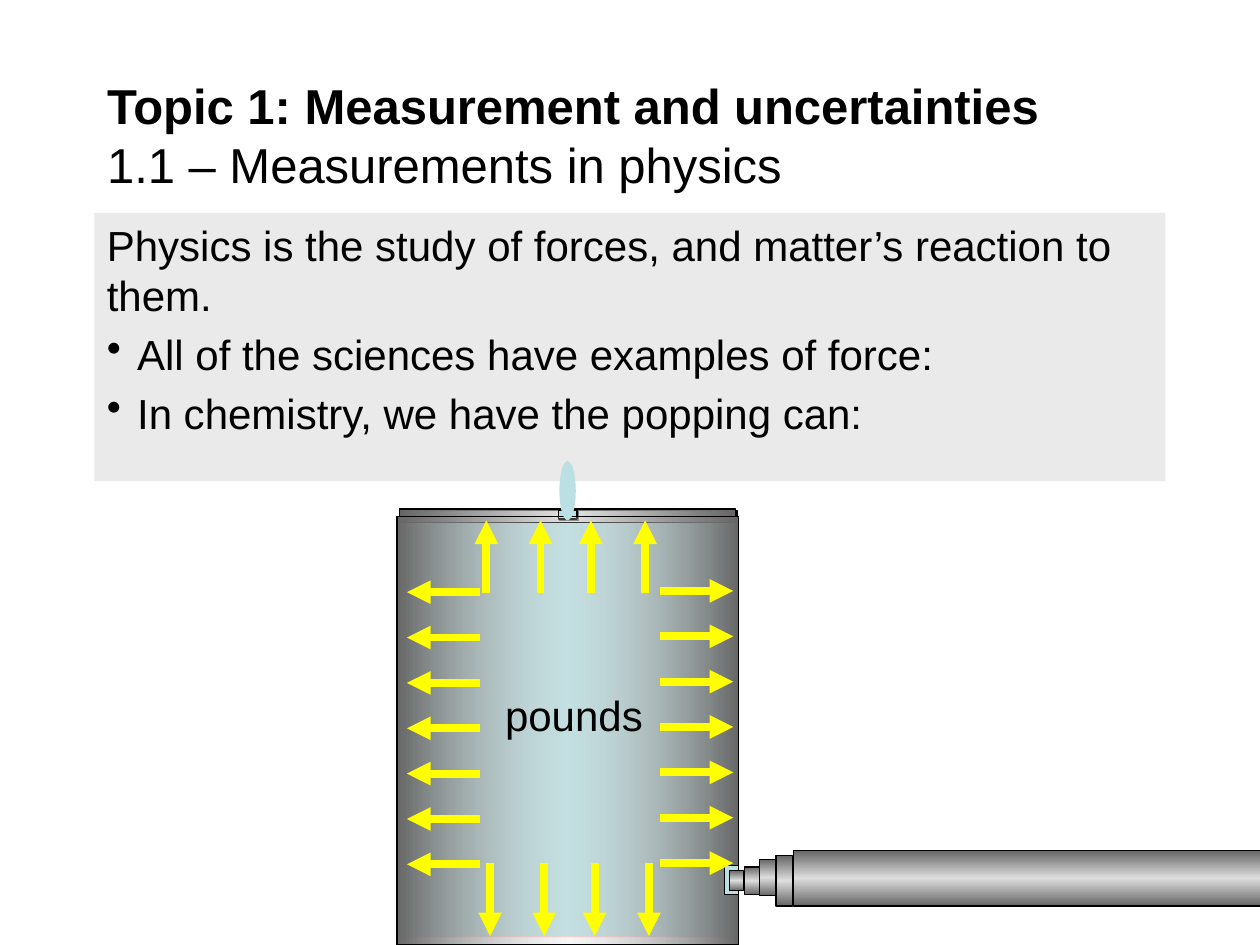
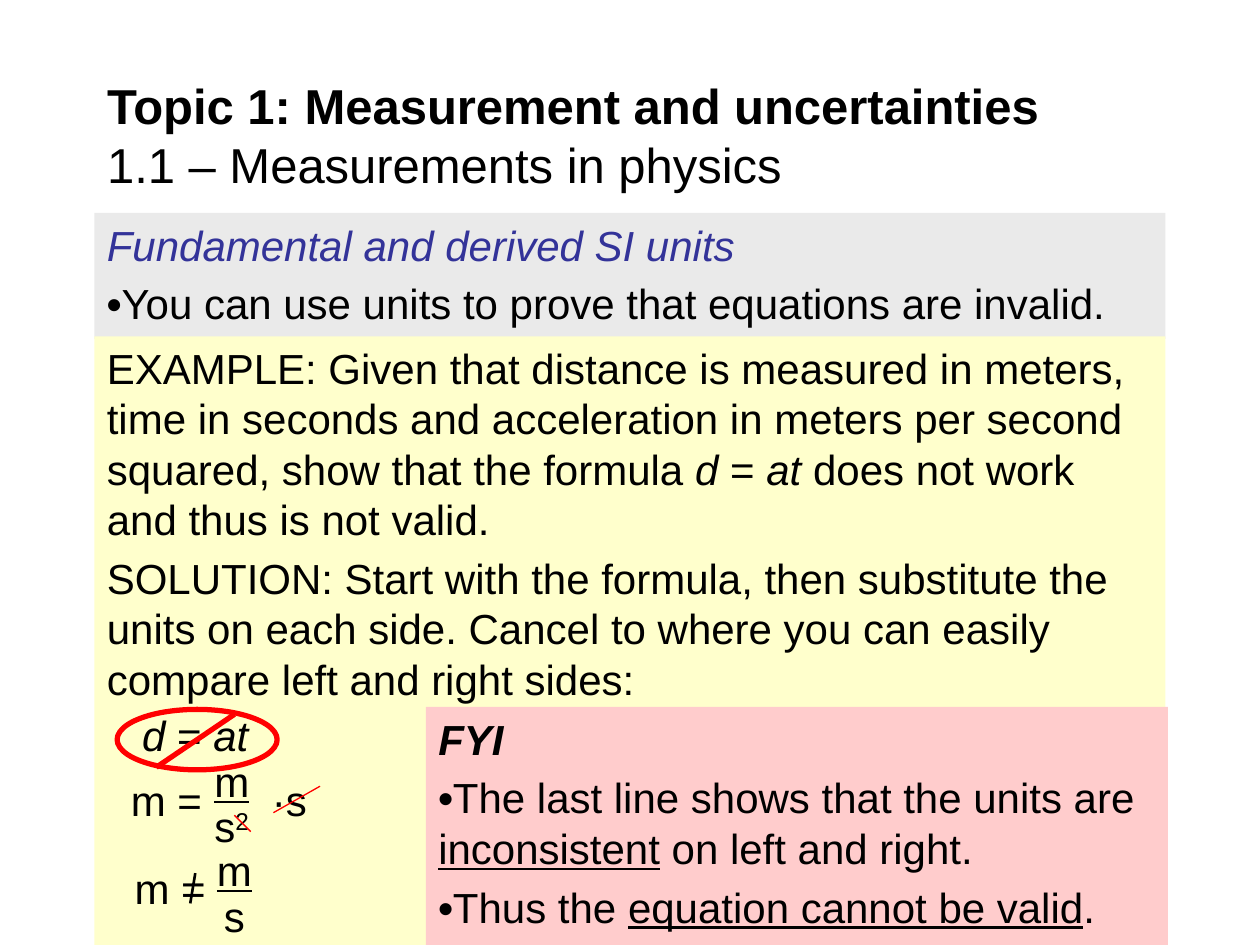
"""Build two physics slides: forces in a popping can, and a unit check of an equation."""
from dataclasses import dataclass

from lxml.etree import SubElement
from pptx import Presentation
from pptx.dml.color import RGBColor
from pptx.enum.shapes import MSO_CONNECTOR, MSO_SHAPE
from pptx.enum.text import MSO_ANCHOR, MSO_AUTO_SIZE, PP_ALIGN
from pptx.oxml.ns import qn
from pptx.util import Inches, Pt


@dataclass(frozen=True)
class Theme:
    font: str = "Arial"
    title_size: int = 28
    body_size: int = 24
    black: str = "000000"
    heading: str = "333399"
    gray: str = "EAEAEA"
    yellow: str = "FFFFCC"
    pink: str = "FFCCCC"
    water: str = "BBE0E3"
    arrow: str = "FFFF00"
    red: str = "FF0000"
    metal_dark: str = "666666"
    metal_light: str = "DDDDDD"


theme = Theme()
BOLD, PLAIN, ITALIC, UNDERLINE = {"bold": True}, {"bold": False}, {"italic": True}, {"underline": True}
SPACED = {"space_before": Pt(4.8)}
TIGHT = {"line_spacing": 0.9}
FRACTION = {**TIGHT, "alignment": PP_ALIGN.CENTER}


def add_block(page, kind, at, fill=None, line=None, width=0.75, angle=0, opacity=100):
    """Add a shape; the fill "metal" is a gradient along the angle with a see-through middle."""
    shape = page.shapes.add_shape(kind, *map(Inches, at))
    shape.shadow.inherit = False
    if fill == "metal":
        shape.fill.gradient()
        shape.fill.gradient_angle = angle
        stops = shape._element.spPr.find(".//" + qn("a:gsLst"))
        for stop in list(stops):
            stops.remove(stop)
        for position, color, alpha in [
            (0, theme.metal_dark, 100),
            (50, theme.metal_light, opacity),
            (100, theme.metal_dark, 100),
        ]:
            stop = SubElement(stops, qn("a:gs"), pos=str(position * 1000))
            tone = SubElement(stop, qn("a:srgbClr"), val=color)
            SubElement(tone, qn("a:alpha"), val=str(alpha * 1000))
    elif fill:
        shape.fill.solid()
        shape.fill.fore_color.rgb = RGBColor.from_string(fill)
    else:
        shape.fill.background()
    if line:
        shape.line.color.rgb = RGBColor.from_string(line)
        shape.line.width = Pt(width)
    else:
        shape.line.fill.background()
    return shape


def write(box, paragraphs, layout, size=theme.body_size, anchor=MSO_ANCHOR.TOP):
    """Fill a box with paragraphs, each a list of (text, font values) spans."""
    frame = box.text_frame
    frame.word_wrap = True
    frame.auto_size = MSO_AUTO_SIZE.NONE
    frame.vertical_anchor = anchor
    for index, spans in enumerate(paragraphs):
        para = frame.paragraphs[0] if index == 0 else frame.add_paragraph()
        for name, value in {"alignment": PP_ALIGN.LEFT, **layout}.items():
            setattr(para, name, value)
        for text, values in spans:
            if text == "\n":
                para.add_line_break()
                continue
            span = para.add_run()
            span.text = text
            look = {"name": theme.font, "size": Pt(size), **values}
            color = look.pop("color", theme.black)
            for name, value in look.items():
                setattr(span.font, name, value)
            span.font.color.rgb = RGBColor.from_string(color)
    return frame


deck = Presentation()
deck.slide_width, deck.slide_height = Inches(10), Inches(7.5)
pages = []
for number in range(2):
    page = deck.slides.add_slide(deck.slide_layouts[5])
    title = page.shapes.title
    title.left, title.top, title.width, title.height = map(Inches, (0.75, 0.58, 8.5, 0.98))
    heading = [("Topic 1: Measurement and uncertainties", BOLD), ("\n", {}),
               ("1.1 – Measurements in physics", PLAIN)]
    write(title, [heading], {}, theme.title_size, MSO_ANCHOR.MIDDLE)
    pages.append(page)
can_page, units_page = pages
lines = []

intro = add_block(can_page, MSO_SHAPE.RECTANGLE, (0.75, 1.69, 8.5, 2.13), theme.gray)
intro_frame = write(intro, [
    [("Physics is the study of forces, and matter’s reaction to them.", {})],
    [("All of the sciences have examples of force:", {})],
    [("In chemistry, we have the popping can:", {})],
], SPACED)
for para in intro_frame.paragraphs[1:]:
    properties = para._p.get_or_add_pPr()
    properties.set("marL", str(Inches(0.24)))
    properties.set("indent", str(-Inches(0.24)))
    SubElement(properties, qn("a:buChar"), char="•")

for shift, inside in [(0.01, theme.pink), (0, theme.water)]:
    add_block(can_page, MSO_SHAPE.RECTANGLE, (3.15 + shift, 4.14 + shift, 2.69, 3.29), inside)
    add_block(can_page, MSO_SHAPE.RECTANGLE, (3.17 + shift, 4.04 + shift, 2.67, 0.11),
              "metal", theme.black, opacity=52)
    add_block(can_page, MSO_SHAPE.RECTANGLE, (4.43 + shift, 4.05 + shift, 0.15, 0.07),
              theme.water, theme.black)
add_block(can_page, MSO_SHAPE.RECTANGLE, (3.15, 4.1, 2.71, 3.4), "metal", theme.black, opacity=23)
add_block(can_page, MSO_SHAPE.RECTANGLE, (5.75, 6.87, 0.11, 0.23), theme.water, theme.black)
for pipe_section in [
    (5.91, 6.88, 0.13, 0.22),
    (6.03, 6.82, 0.13, 0.29),
    (6.16, 6.79, 0.13, 0.4),
    (5.79, 6.91, 0.11, 0.16),
    (6.3, 6.75, 4.16, 0.44),
]:
    add_block(can_page, MSO_SHAPE.RECTANGLE, pipe_section, "metal", theme.black, angle=90)
add_block(can_page, MSO_SHAPE.OVAL, (4.44, 3.66, 0.13, 0.47), theme.water)

for row in range(7):
    y = 4.69 + 0.36 * row
    lines.append((can_page, (5.24, y, 5.82, y), theme.arrow, 4.5, True))
    lines.append((can_page, (3.81, y + 0.01, 3.23, y + 0.01), theme.arrow, 4.5, True))
for x in (3.86, 4.29, 4.69, 5.12):
    lines.append((can_page, (x, 4.71, x, 4.13), theme.arrow, 4.5, True))
    lines.append((can_page, (x + 0.03, 6.85, x + 0.03, 7.43), theme.arrow, 4.5, True))
pounds = can_page.shapes.add_textbox(*map(Inches, (3.91, 5.42, 1.39, 0.5)))
write(pounds, [[("pounds", {})]], {"space_before": Pt(12)})

for at, fill, paragraphs in [
    ((0.75, 1.69, 8.5, 1), theme.gray, [
        [("Fundamental and derived SI units", {**ITALIC, "color": theme.heading})],
        [("•", BOLD), ("You can use units to prove that equations are invalid.", {})],
    ]),
    ((0.75, 2.67, 8.5, 4.83), theme.yellow, [
        [("EXAMPLE: Given that distance is measured in meters, time in seconds and acceleration "
          "in meters per second squared, show that the formula ", {}),
         ("d", ITALIC), (" = ", {}), ("at", ITALIC), (" does not work and thus is not valid.", {})],
        [("SOLUTION: Start with the formula, then substitute the units on each side. "
          "Cancel to where you can easily compare left and right sides:", {})],
    ]),
    ((3.38, 5.61, 5.89, 1.89), theme.pink, [
        [("FYI", {**BOLD, **ITALIC})],
        [("•", BOLD), ("The last line shows that the units are ", {}),
         ("inconsistent", UNDERLINE), (" on left and right.", {})],
        [("•", BOLD), ("Thus the ", {}), ("equation cannot be valid", UNDERLINE), (".", {})],
    ]),
]:
    panel = add_block(units_page, MSO_SHAPE.RECTANGLE, at, fill)
    write(panel, paragraphs, SPACED)

for at, paragraphs, layout in [
    ((1.03, 5.63, 1.47, 0.37), [[("d", ITALIC), (" = ", {}), ("at", ITALIC)]], {**TIGHT, **SPACED}),
    ((0.94, 6.14, 0.87, 0.37), [[("m =", {})]], {**TIGHT, **SPACED}),
    ((2.06, 6.14, 0.66, 0.37), [[("·s", {})]], {**TIGHT, **SPACED}),
    ((0.97, 6.84, 0.87, 0.37), [[("m =", {})]], {**TIGHT, **SPACED}),
    ((1.53, 6.7, 0.66, 0.68), [[("m", UNDERLINE)], [("s", {})]], FRACTION),
    ((1.51, 5.99, 0.66, 0.68), [[("m", UNDERLINE)], [("s", {}), ("2", {})]], FRACTION),
]:
    equation = write(units_page.shapes.add_textbox(*map(Inches, at)), paragraphs, layout)
exponent = equation.paragraphs[1].runs[1]
exponent._r.get_or_add_rPr().set("baseline", "30000")

add_block(units_page, MSO_SHAPE.OVAL, (0.93, 5.63, 1.27, 0.48), line=theme.red, width=3)
lines += [
    (units_page, (1.86, 6.47, 1.99, 6.6), theme.red, 0.75, False),
    (units_page, (2.17, 6.45, 2.54, 6.24), theme.red, 0.75, False),
    (units_page, (1.86, 5.67, 1.24, 6.09), theme.red, 3, False),
    (units_page, (1.55, 6.93, 1.51, 7.17), theme.black, 1.5, False),
]
for page, ends, color, width, has_arrow in lines:
    connector = page.shapes.add_connector(MSO_CONNECTOR.STRAIGHT, *map(Inches, ends))
    connector.line.color.rgb = RGBColor.from_string(color)
    connector.line.width = Pt(width)
    if has_arrow:
        SubElement(connector.line._get_or_add_ln(), qn("a:tailEnd"), type="triangle")
    SubElement(connector._element.spPr, qn("a:effectLst"))

deck.save("out.pptx")
